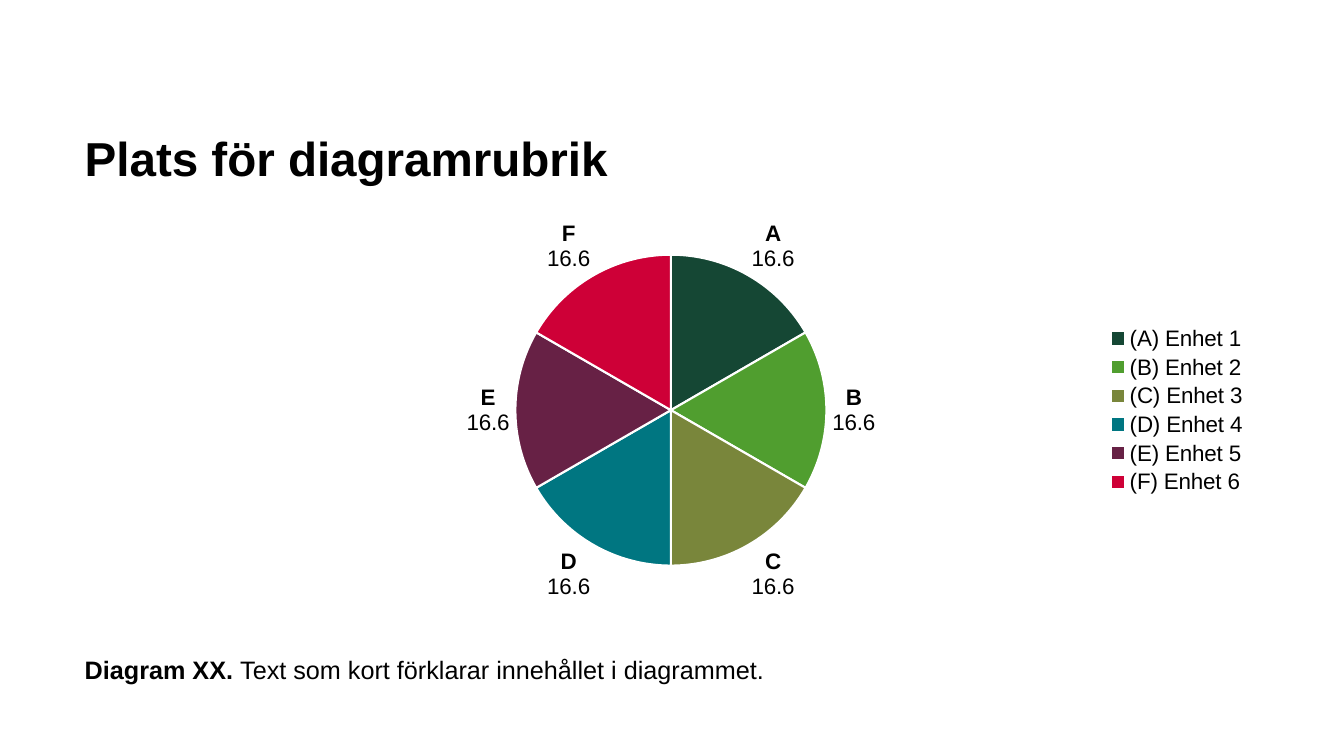
from lxml.etree import SubElement
from pptx import Presentation
from pptx.chart.data import CategoryChartData
from pptx.dml.color import RGBColor
from pptx.enum.chart import XL_CHART_TYPE, XL_LABEL_POSITION, XL_LEGEND_POSITION
from pptx.enum.text import MSO_ANCHOR, MSO_AUTO_SIZE, PP_ALIGN
from pptx.oxml.ns import qn
from pptx.util import Inches, Pt

TITLE = "Plats för diagramrubrik"
CAPTION = [("Diagram XX. ", True), ("Text som kort förklarar innehållet i diagrammet.", False)]
COLORS = {"text": "000000", "divider": "FFFFFF", "A": "154734", "B": "509E2F",
          "C": "79863B", "D": "007681", "E": "672145", "F": "CE0037"}
UNITS = "ABCDEF"
SHARE = 17
SHARE_LABEL = "16.6"
FONT = "Arial"
LEFT, WIDTH = 0.84, 11.64
PIE_AREA = {"x": 0.367, "y": 0.102, "w": 0.265, "h": 0.796}


def color(name):
    return RGBColor.from_string(COLORS[name])


def style(font, size, bold=False):
    font.name, font.size, font.bold = FONT, Pt(size), bold
    font.color.rgb = color("text")


def place_text(shape, top, height, anchor):
    """Position a placeholder and return its first paragraph."""
    shape.left, shape.top = Inches(LEFT), Inches(top)
    shape.width, shape.height = Inches(WIDTH), Inches(height)
    frame = shape.text_frame
    frame.margin_left = frame.margin_right = frame.margin_top = frame.margin_bottom = 0
    frame.vertical_anchor = anchor
    frame.word_wrap = True
    frame.auto_size = MSO_AUTO_SIZE.NONE
    paragraph = frame.paragraphs[0]
    paragraph.alignment = PP_ALIGN.LEFT
    paragraph.space_before = Pt(0)
    return paragraph


presentation = Presentation()
presentation.slide_width, presentation.slide_height = Inches(13.33), Inches(7.5)
slide = presentation.slides.add_slide(presentation.slide_layouts[7])
content = slide.placeholders[1].element
content.getparent().remove(content)

# Title
paragraph = place_text(slide.shapes.title, 1.35, 0.5, MSO_ANCHOR.BOTTOM)
paragraph.text = TITLE
paragraph.line_spacing = Pt(36)
style(paragraph.font, 34, True)

# Pie chart
chart_data = CategoryChartData()
chart_data.categories = [f"({unit}) Enhet {number}" for number, unit in enumerate(UNITS, 1)]
chart_data.add_series("Series 1", [SHARE] * len(UNITS))
chart = slide.shapes.add_chart(XL_CHART_TYPE.PIE, Inches(LEFT), Inches(2.13),
                               Inches(WIDTH), Inches(3.88), chart_data).chart
style(chart.font, 16)
chart.has_title = False
chart.has_legend = True
chart.legend.position = XL_LEGEND_POSITION.RIGHT
chart.legend.include_in_layout = False
style(chart.legend.font, 16)

plot = chart.plots[0]
plot.vary_by_categories = True
plot_labels = plot.series[0].data_labels
plot_labels.show_percentage = True
plot_labels.show_value = False
plot_labels.position = XL_LABEL_POSITION.OUTSIDE_END
style(plot_labels.font, 16)

# Slices with a bold letter above the value
for index, unit in enumerate(UNITS):
    point = plot.series[0].points[index]
    point.format.fill.solid()
    point.format.fill.fore_color.rgb = color(unit)
    point.format.line.color.rgb = color("divider")
    point.format.line.width = Pt(1.5)
    frame = point.data_label.text_frame
    for paragraph, text, bold in ((frame.paragraphs[0], unit, True),
                                  (frame.add_paragraph(), SHARE_LABEL, False)):
        run = paragraph.add_run()
        run.text = text
        style(run.font, 16, bold)
    point.data_label.position = XL_LABEL_POSITION.OUTSIDE_END

# Fixed inner plot area
plot_area = chart.element.find(f".//{qn('c:plotArea')}")
layout = plot_area.find(qn("c:layout"))
if layout is None:
    layout = SubElement(plot_area, qn("c:layout"))
    plot_area.insert(0, layout)
manual = SubElement(layout, qn("c:manualLayout"))
settings = {"layoutTarget": "inner", "xMode": "edge", "yMode": "edge", **PIE_AREA}
for name, value in settings.items():
    SubElement(manual, qn(f"c:{name}")).set("val", str(value))

# Caption
paragraph = place_text(slide.placeholders[2], 6.33, 0.62, MSO_ANCHOR.MIDDLE)
for text, bold in CAPTION:
    run = paragraph.add_run()
    run.text = text
    style(run.font, 18, bold)

presentation.save("out.pptx")
